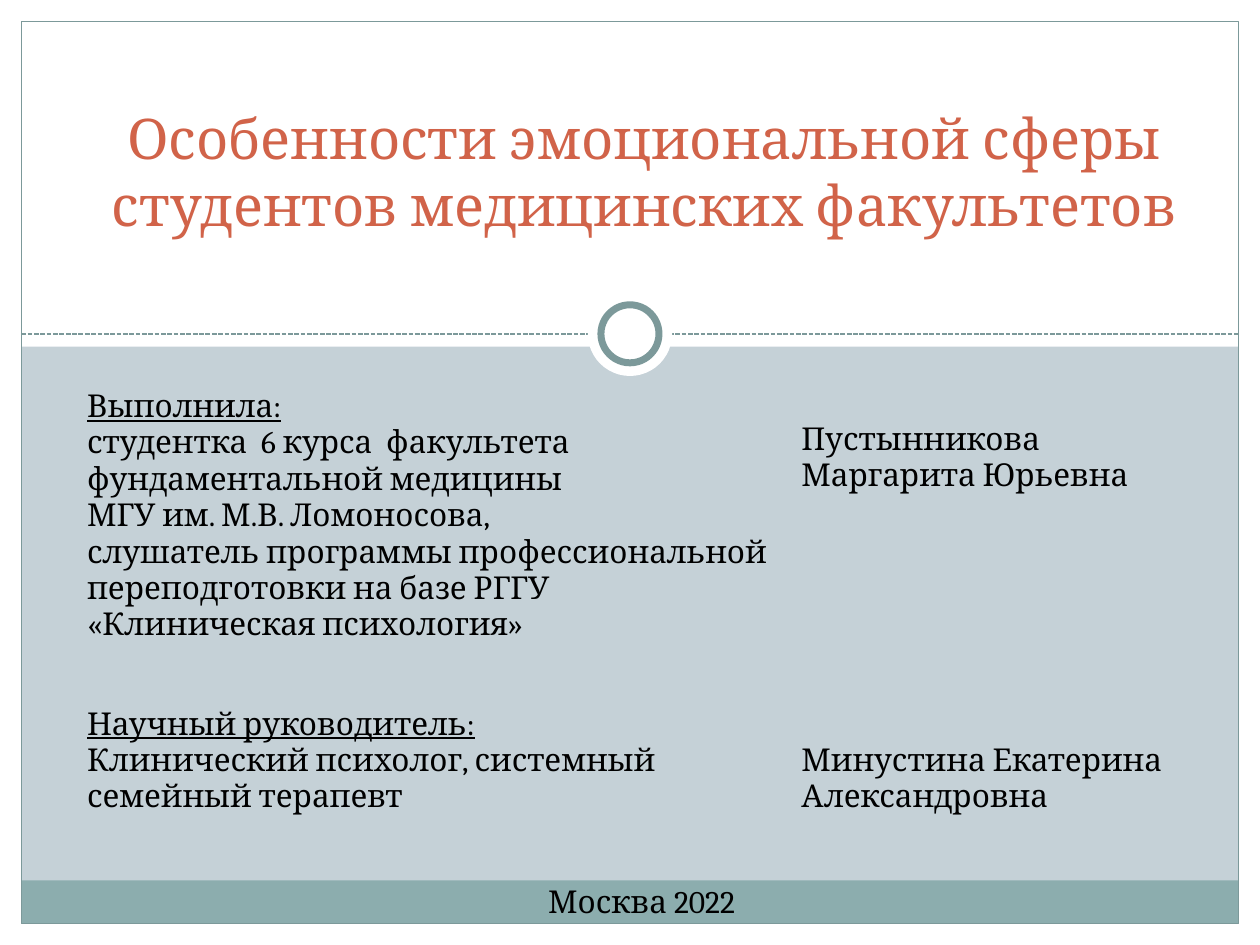
from dataclasses import dataclass

from lxml import etree
from pptx import Presentation
from pptx.dml.color import RGBColor as RGB
from pptx.enum.dml import MSO_LINE_DASH_STYLE as DASH
from pptx.enum.shapes import MSO_CONNECTOR as CONNECTOR, MSO_SHAPE as SHAPE
from pptx.enum.text import MSO_ANCHOR as ANCHOR, PP_ALIGN as ALIGN
from pptx.oxml.ns import qn
from pptx.util import Cm, Pt


@dataclass(frozen=True)
class Theme:
    font: str = "Cambria"
    title_size: int = 32
    text_size: int = 18
    background: RGB = RGB(0xC5, 0xD1, 0xD7)
    white: RGB = RGB(0xFF, 0xFF, 0xFF)
    footer: RGB = RGB(0x8C, 0xAD, 0xAE)
    outline: RGB = RGB(0x7C, 0x99, 0x9A)
    title: RGB = RGB(0xD1, 0x63, 0x49)
    text: RGB = RGB(0, 0, 0)


theme = Theme()
WIDTH, HEIGHT, MARGIN = 25.4, 19.05, 0.43
NO_STYLE = "{2D5ABB26-0587-4C30-8999-92F81FD0307C}"

deck = Presentation()
deck.slide_width, deck.slide_height = Cm(WIDTH), Cm(HEIGHT)
slide = deck.slides.add_slide(deck.slide_layouts[5])
slide.background.fill.solid()
slide.background.fill.fore_color.rgb = theme.background


def add_plain(kind, left, top, width, height, fill=None, line_width=None):
    shape = slide.shapes.add_shape(kind, Cm(left), Cm(top), Cm(width), Cm(height))
    shape.shadow.inherit = False
    if fill is None:
        shape.fill.background()
    else:
        shape.fill.solid()
        shape.fill.fore_color.rgb = fill
    if line_width is None:
        shape.line.fill.background()
    else:
        shape.line.color.rgb = theme.outline
        shape.line.width = Pt(line_width)


def format_runs(paragraph, size, color, underline=None):
    for run in paragraph.runs:
        run.font.name = theme.font
        run.font.size = Pt(size)
        run.font.color.rgb = color
        run.font.underline = underline


# White margins, title band and footer band
inner_width, inner_height = WIDTH - 2 * MARGIN, HEIGHT - 2 * MARGIN
for left, top, width, height, fill in (
    (0, HEIGHT - MARGIN, WIDTH, MARGIN, theme.white),
    (WIDTH - MARGIN, 0, MARGIN, HEIGHT, theme.white),
    (0, 0, MARGIN, HEIGHT, theme.white),
    (0, 0, WIDTH, 6.99, theme.white),
    (MARGIN, 17.75, inner_width, 0.87, theme.footer),
):
    add_plain(SHAPE.RECTANGLE, left, top, width, height, fill)

# Dashed divider and slide frame
divider_y = 6.73
divider = slide.shapes.add_connector(
    CONNECTOR.STRAIGHT, Cm(MARGIN), Cm(divider_y), Cm(WIDTH - MARGIN), Cm(divider_y))
divider.line.color.rgb = theme.outline
divider.line.width = Pt(0.9)
divider.line.dash_style = DASH.SQUARE_DOT
etree.SubElement(divider._element.spPr, qn("a:effectLst"))
add_plain(SHAPE.RECTANGLE, MARGIN, MARGIN, inner_width, inner_height, line_width=0.75)

# Ring centred on the divider
for diameter, line_width in ((1.7, None), (1.17, 4)):
    add_plain(SHAPE.OVAL, (WIDTH - diameter) / 2, divider_y - diameter / 2,
              diameter, diameter, theme.white, line_width)

# Title, brought in front of the white band
title = slide.shapes.title
title.left, title.top, title.width, title.height = Cm(1.45), Cm(1.52), Cm(23.09), Cm(3.4)
title.text_frame.text = "Особенности эмоциональной сферы студентов медицинских факультетов"
title.text_frame.vertical_anchor = ANCHOR.BOTTOM
title.text_frame.paragraphs[0].alignment = ALIGN.CENTER
format_runs(title.text_frame.paragraphs[0], theme.title_size, theme.title)
slide.shapes._spTree.append(title._element)

# Author and supervisor: role on the left, name on the right
people = (
    (6.4, 0.78, "Пустынникова Маргарита Юрьевна", (
        "Выполнила:",
        "студентка  6 курса  факультета фундаментальной медицины",
        "МГУ им. М.В. Ломоносова,",
        "слушатель программы профессиональной переподготовки на базе РГГУ "
        "«Клиническая психология»",
    )),
    (2.92, 0.86, "Минустина Екатерина Александровна", (
        "Научный руководитель:",
        "Клинический психолог, системный семейный терапевт",
    )),
)
people_frame = slide.shapes.add_table(
    len(people), 2, Cm(1.5), Cm(7.72), Cm(22.2), Cm(9.32))
people_table = people_frame.table
people_table.first_row = people_table.horz_banding = False
people_table._tbl.tblPr.find(qn("a:tableStyleId")).text = NO_STYLE
for column, width in zip(people_table.columns, (14.4, 7.8)):
    column.width = Cm(width)

for row_index, (height, name_offset, name, role) in enumerate(people):
    people_table.rows[row_index].height = Cm(height)
    role_cell = people_table.cell(row_index, 0)
    name_cell = people_table.cell(row_index, 1)
    role_cell.text_frame.text = "\n".join(role)
    name_cell.text_frame.text = name
    name_cell.margin_top = Cm(name_offset)
    for cell in (role_cell, name_cell):
        cell.fill.background()
        for paragraph in cell.text_frame.paragraphs:
            format_runs(paragraph, theme.text_size, theme.text)
    role_cell.text_frame.paragraphs[0].runs[0].font.underline = True

# Place and year
place = slide.shapes.add_textbox(Cm(10.8), Cm(17.65), Cm(4.37), Cm(1.02))
place.text_frame.word_wrap = False
place.text_frame.text = "Москва 2022"
format_runs(place.text_frame.paragraphs[0], theme.text_size, theme.text)

deck.save("out.pptx")
